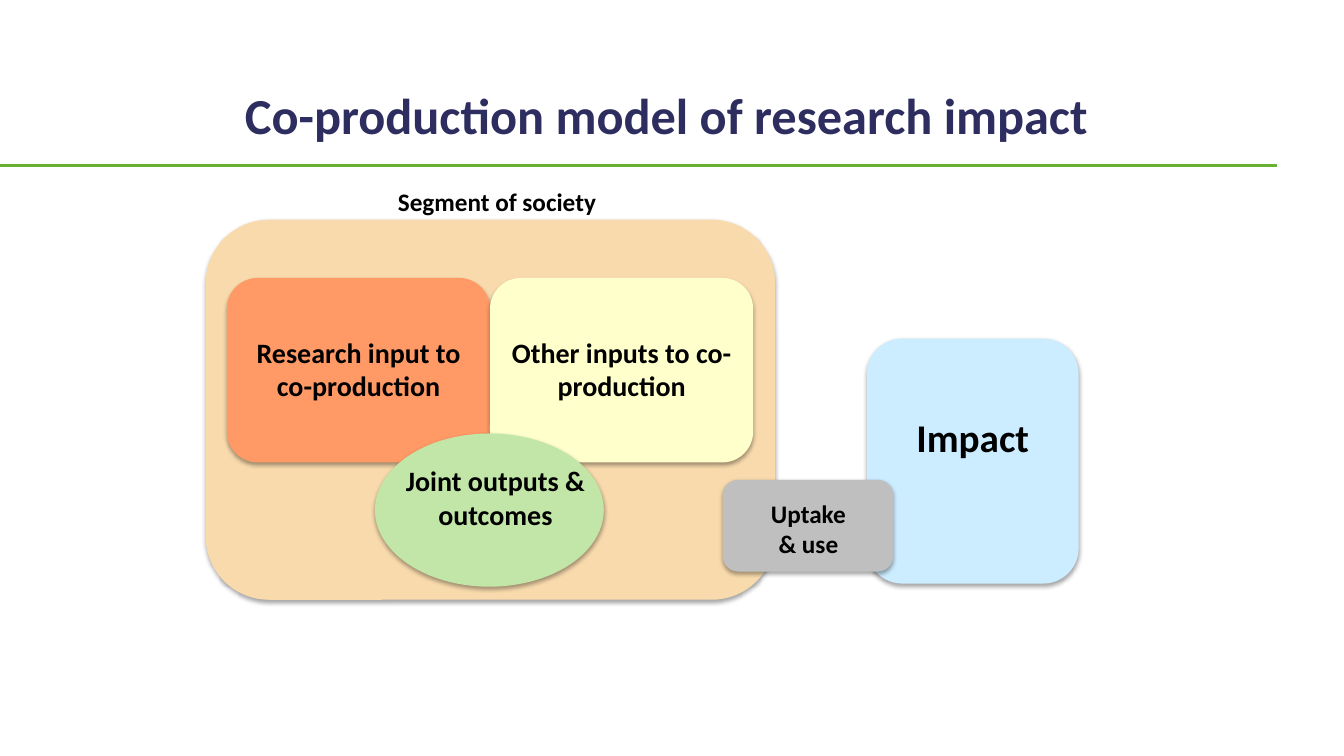
from lxml import etree
from pptx import Presentation
from pptx import util as u
from pptx.dml.color import RGBColor
from pptx.enum import shapes, text
from pptx.oxml import ns

deck = Presentation()
deck.slide_width, deck.slide_height = u.Inches(13.33), u.Inches(7.5)

# Grid of 100 columns by 100 rows
COLUMN, ROW = deck.slide_width / 100, deck.slide_height / 100
ROUNDED = shapes.MSO_SHAPE.ROUNDED_RECTANGLE
OVAL = shapes.MSO_SHAPE.OVAL


def color(value):
    return RGBColor.from_string(value)


def lengths(box):
    left, top, width, height = box
    return [int(size) for size in (left * COLUMN, top * ROW, width * COLUMN, height * ROW)]


def inside(box, part):
    """Move a part, given relative to a box, onto the slide grid."""
    return (box[0] + part[0], box[1] + part[1], part[2], part[3])


def add_label(page, box, words, size, ink="000000", anchor=text.MSO_ANCHOR.TOP):
    frame = page.shapes.add_textbox(*lengths(box)).text_frame
    frame.word_wrap = True
    frame.vertical_anchor = anchor
    para = frame.paragraphs[0]
    para.text = words
    para.alignment = text.PP_ALIGN.CENTER
    for span in para.runs:
        for name, value in {"name": "Calibri", "size": u.Pt(size), "bold": True}.items():
            setattr(span.font, name, value)
        span.font.color.rgb = color(ink)


def add_shadow(shape):
    shape.shadow.inherit = False
    effects = shape.element.spPr.find(ns.qn("a:effectLst"))
    outer = etree.SubElement(effects, ns.qn("a:outerShdw"), blurRad="40000",
                             dist="23000", dir="5400000", rotWithShape="0")
    tint = etree.SubElement(outer, ns.qn("a:srgbClr"), val="000000")
    etree.SubElement(tint, ns.qn("a:alpha"), val="35000")


def add_block(page, kind, box, fill):
    block = page.shapes.add_shape(kind, *lengths(box))
    block.fill.solid()
    block.fill.fore_color.rgb = color(fill)
    block.line.fill.background()
    add_shadow(block)


def add_stage(page, kind, box, fill, label, words, size):
    """A filled block with its label placed inside it."""
    add_block(page, kind, box, fill)
    add_label(page, inside(box, label), words, size)


def add_header(page, box):
    add_label(page, box, "Co-production model of research impact", 36, "2E2D60",
              text.MSO_ANCHOR.BOTTOM)
    level = int((box[1] + 15.87) * ROW)
    rule = page.shapes.add_connector(shapes.MSO_CONNECTOR.STRAIGHT,
                                     0, level, int(95 * COLUMN), level)
    rule.line.color.rgb = color("68B133")
    rule.line.width = u.Pt(2)
    etree.SubElement(rule.element.spPr, ns.qn("a:effectLst"))


def add_society(page, box):
    add_block(page, ROUNDED, box, "F8DAAC")
    add_label(page, inside(box, (11.48, -5.07, 20.4, 5.33)), "Segment of society", 18)
    # Two inputs side by side
    width = 19.58
    inputs = [("FF9966", "Research input to co-production"),
              ("FFFFCC", "Other inputs to co-production")]
    for index, (fill, words) in enumerate(inputs):
        place = inside(box, (1.58 + index * width, 7.7, width, 24.4))
        add_stage(page, ROUNDED, place, fill, (0.5, 6.93, 18.6, 10.27), words, 20)
    # What they yield together
    add_stage(page, OVAL, inside(box, (12.6, 28.27, 17.03, 20.27)), "C2E6A7",
              (0.9, 3.33, 16.13, 14.8), "Joint outputs &\noutcomes", 20)


def add_impact(page, box):
    add_stage(page, ROUNDED, box, "CCECFF", (2.25, 9.2, 11.25, 7.6), "Impact", 28)


def add_uptake(page, box):
    add_stage(page, ROUNDED, box, "BFBFBF", (0.97, 1.73, 10.8, 9.47), "Uptake\n& use", 18)


def main():
    page = deck.slides.add_slide(deck.slide_layouts[6])
    add_header(page, (12.5, 6, 74.2, 13.73))
    add_society(page, (15.3, 29.07, 42.38, 50.27))
    add_impact(page, (64.5, 44.8, 15.75, 32.4))
    add_uptake(page, (53.78, 63.47, 12.68, 12.13))
    deck.save("out.pptx")


if __name__ == "__main__":
    main()
